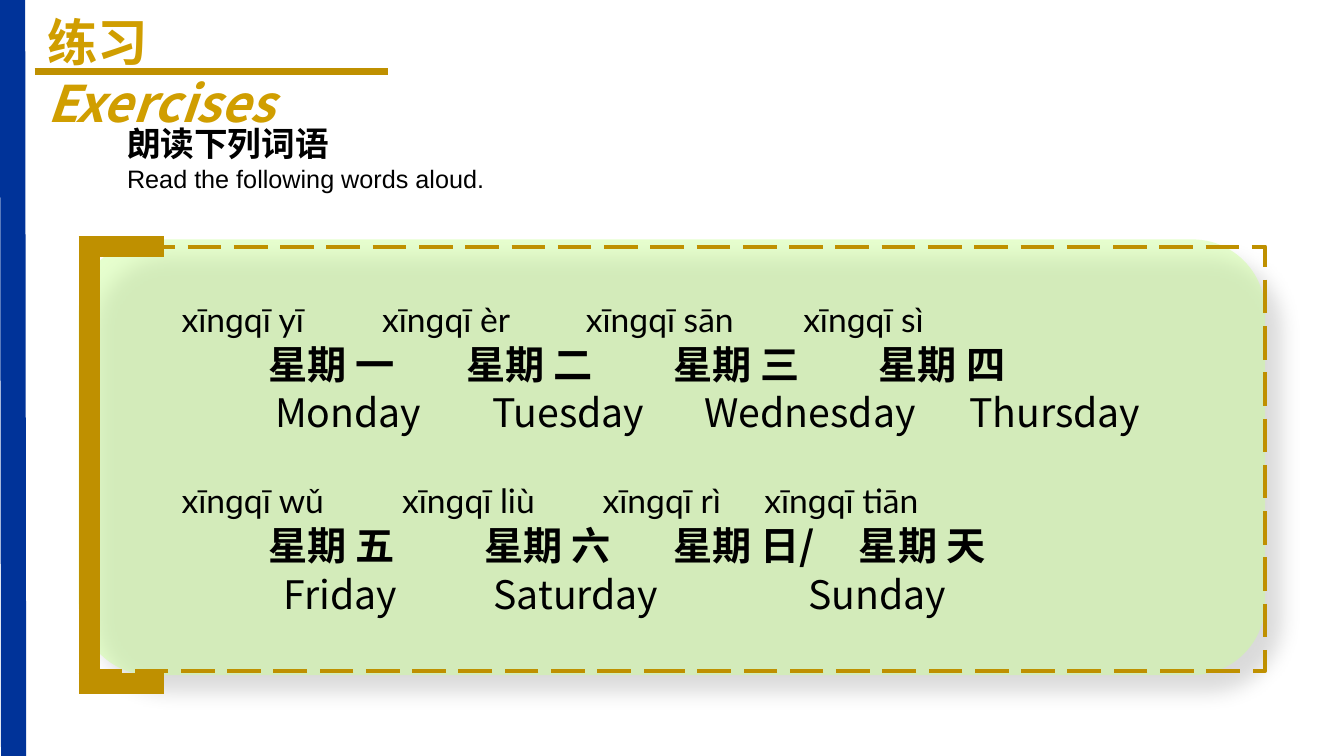
from dataclasses import dataclass

from lxml.etree import SubElement
from pptx import Presentation
from pptx.dml.color import RGBColor
from pptx.enum.dml import MSO_LINE
from pptx.enum.shapes import MSO_CONNECTOR, MSO_SHAPE
from pptx.enum.text import MSO_ANCHOR, MSO_AUTO_SIZE, PP_ALIGN
from pptx.oxml.ns import qn
from pptx.util import Emu, Pt

PX = 9525  # EMU in one px, 96 px to the inch


@dataclass(frozen=True)
class Theme:
    gold: str = "BF9000"
    title_gold: str = "D09E00"
    blue: str = "003399"
    green: str = "CCFF99"
    black: str = "000000"
    cjk: str = "Noto Sans CJK SC"
    pinyin: str = "Lato"
    body: str = "Arial"
    title_size: int = 36
    word_size: int = 28
    lead_size: int = 24
    note_size: int = 18


T = Theme()
FRAME = (85, 235, 1120, 404)
LINE_PITCH = Pt(34.5)
WEEK_GAP = Pt(26)

# Each row: kind, then (left edge in px, word) pairs
WEEK_ROWS = [
    ("pinyin", [(173, "xīnɡqī yī"), (364, "xīnɡqī èr"), (558, "xīnɡqī sān"), (765, "xīnɡqī sì")]),
    ("hanzi", [(256, "星期 一"), (444, "星期 二"), (641, "星期 三"), (837, "星期 四")]),
    ("english", [(262, "Monday"), (469, "Tuesday"), (671, "Wednesday"), (923, "Thursday")]),
    ("pinyin", [(173, "xīnɡqī wǔ"), (383, "xīnɡqī liù"), (574, "xīnɡqī rì"), (728, "xīnɡqī tiān")]),
    ("hanzi", [(256, "星期 五"), (461, "星期 六"), (641, "星期 日/"), (818, "星期 天")]),
    ("english", [(270, "Friday"), (470, "Saturday"), (770, "Sunday")]),
]
ROW_STYLES = {
    "pinyin": (T.pinyin, T.lead_size, False),
    "hanzi": (T.cjk, T.word_size, True),
    "english": (T.cjk, T.word_size, False),
}


def px(*lengths):
    return [Emu(n * PX) for n in lengths]


def rgb(color):
    return RGBColor.from_string(color)


def add_run(p, text, font, size, color=T.black, bold=False, italic=False):
    r = p.add_run()
    r.text = text
    f = r.font
    f.name, f.size, f.bold, f.italic = font, Pt(size), bold, italic
    f.color.rgb = rgb(color)
    SubElement(r._r.get_or_add_rPr(), qn("a:ea"), typeface=font)


def set_frame(sp, left=10, top=5):
    tf = sp.text_frame
    tf.word_wrap = True
    tf.auto_size = MSO_AUTO_SIZE.NONE
    tf.vertical_anchor = MSO_ANCHOR.TOP
    tf.margin_left, tf.margin_top, tf.margin_right, tf.margin_bottom = px(left, top, 0, 0)
    return tf


def place(sp, *box):
    sp.left, sp.top, sp.width, sp.height = px(*box)


def add_line(shapes, x1, y1, x2, y2, color, width):
    line = shapes.add_connector(MSO_CONNECTOR.STRAIGHT, *px(x1, y1, x2, y2))
    line.line.color.rgb = rgb(color)
    line.line.width = Pt(width)
    SubElement(line._element.spPr, qn("a:effectLst"))


def add_title(sp):
    place(sp, 35, 5, 335, 120)
    p = set_frame(sp).paragraphs[0]
    p.alignment = PP_ALIGN.LEFT
    p.line_spacing = Pt(43.5)
    add_run(p, "练习", T.cjk, T.title_size, T.title_gold, bold=True)
    p.add_line_break()
    add_run(p, "Exercises", T.cjk, T.title_size, T.title_gold, bold=True, italic=True)


def add_instruction(sp):
    place(sp, 111, 112, 884, 78)
    tf = set_frame(sp)
    lines = [("朗读下列词语", T.lead_size, True),
             ("Read the following words aloud.", T.note_size, False)]
    for i, (text, size, bold) in enumerate(lines):
        p = tf.add_paragraph() if i else tf.paragraphs[0]
        p.space_before = Pt(0)
        p.line_spacing = 1.0
        pPr = p._p.get_or_add_pPr()
        pPr.set("marL", "0")
        pPr.set("indent", "0")
        SubElement(pPr, qn("a:buNone"))
        add_run(p, text, T.body, size, bold=bold)


def add_panel(shapes):
    sp = shapes.add_shape(MSO_SHAPE.ROUNDED_RECTANGLE, *px(75, 228, 1130, 415))
    sp.shadow.inherit = False
    sp.line.fill.background()
    sp.fill.solid()
    sp.fill.fore_color.rgb = rgb(T.green)
    spPr = sp._element.spPr
    SubElement(spPr.find(".//" + qn("a:srgbClr")), qn("a:alpha"), val="48000")
    shadow = SubElement(spPr.find(qn("a:effectLst")), qn("a:outerShdw"),
                        blurRad=str(Pt(15)), dist=str(Pt(18)), dir="2700000",
                        algn="tl", rotWithShape="0")
    tone = SubElement(shadow, qn("a:srgbClr"), val=T.black)
    SubElement(tone, qn("a:alpha"), val="30000")


def add_word_row(p, kind, words):
    p.alignment = PP_ALIGN.LEFT
    p.line_spacing = LINE_PITCH
    tabs = SubElement(p._p.get_or_add_pPr(), qn("a:tabLst"))
    for x, word in words:
        SubElement(tabs, qn("a:tab"), pos=str((x - FRAME[0]) * PX), algn="l")
        font, size, bold = ROW_STYLES[kind]
        add_run(p, "\t" + word, font, size, bold=bold)


def add_word_frame(shapes):
    sp = shapes.add_shape(MSO_SHAPE.RECTANGLE, *px(*FRAME))
    sp.shadow.inherit = False
    sp.fill.background()
    sp.line.color.rgb = rgb(T.gold)
    sp.line.width = Pt(3)
    sp.line.dash_style = MSO_LINE.LONG_DASH
    tf = set_frame(sp, left=0, top=42)
    for i, (kind, words) in enumerate(WEEK_ROWS):
        p = tf.add_paragraph() if i else tf.paragraphs[0]
        if i == len(ROW_STYLES):
            p.space_before = WEEK_GAP
        add_word_row(p, kind, words)


def main():
    prs = Presentation()
    prs.slide_width, prs.slide_height = px(1280, 720)
    slide = prs.slides.add_slide(prs.slide_layouts[1])
    shapes = slide.shapes

    # Panel and side stripe
    add_panel(shapes)
    add_line(shapes, 13, 720, 12, 0, T.blue, 18)

    # Heading with its rule, and the instruction
    add_title(shapes.title)
    add_line(shapes, 33, 68, 370, 68, T.gold, 5.5)
    add_instruction(slide.placeholders[1])

    # Days of the week, framed by a bracket
    add_word_frame(shapes)
    add_line(shapes, 85, 235, 85, 643, T.gold, 15)
    for y in (651, 235):
        add_line(shapes, 75, y, 156, y, T.gold, 15)

    prs.save("out.pptx")


if __name__ == "__main__":
    main()
